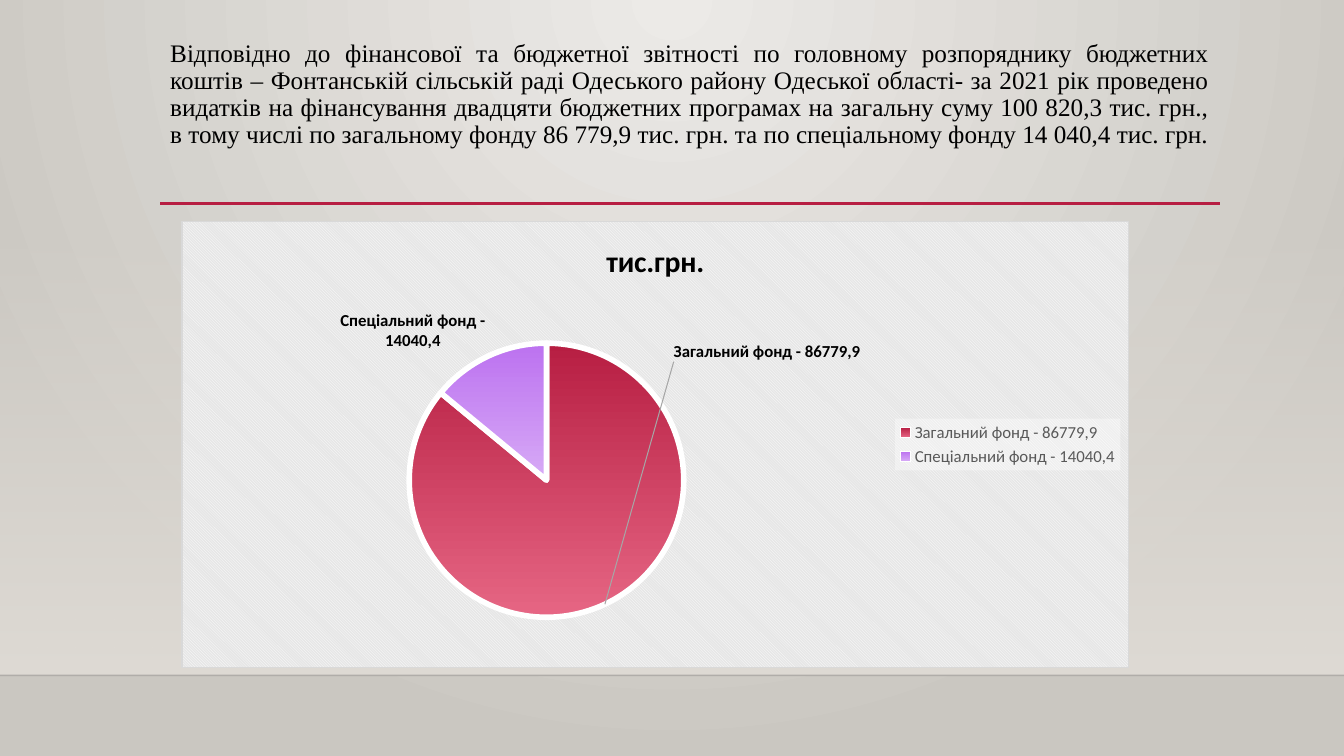
from lxml import etree
from pptx import Presentation
from pptx.chart.data import CategoryChartData
from pptx.dml.color import RGBColor
from pptx.enum.chart import XL_CHART_TYPE as ChartType, XL_LABEL_POSITION as LabelPosition
from pptx.enum.chart import XL_LEGEND_POSITION as LegendPosition
from pptx.enum.shapes import MSO_CONNECTOR as Connector, MSO_SHAPE as Shape
from pptx.enum.text import MSO_ANCHOR as Anchor, PP_ALIGN as Align
from pptx.oxml import parse_xml
from pptx.oxml.ns import nsdecls, qn
from pptx.util import Inches, Pt

# Content
HEADLINE = (
    "Відповідно до фінансової та бюджетної звітності по головному розпоряднику "
    "бюджетних коштів – Фонтанській сільській раді Одеського району Одеської "
    "області- за 2021 рік проведено видатків на фінансування двадцяти бюджетних "
    "програмах на загальну суму 100 820,3 тис. грн., в тому числі по загальному "
    "фонду 86 779,9 тис. грн. та по спеціальному фонду 14 040,4 тис. грн."
)
CHART_TITLE = "тис.грн."
FUNDS = [  # category, share, gradient from top to bottom
    ("Загальний фонд - 86779,9", 86, ("crimson", "rose")),
    ("Спеціальний фонд - 14040,4", 14, ("violet", "lilac")),
]
COLORS = {
    "black": "000000", "white": "FFFFFF", "crimson": "B71E42", "rose": "E66684",
    "violet": "BC72F0", "lilac": "D7AAF6", "light": "ECEAE7", "dark": "CAC7C1",
    "wall": "DFDBD5", "floor": "000001", "legend": "595959", "stripe": "E6E6E6",
    "border": "D9D9D9", "leader": "A6A6A6",
}
PIE_AREA = {"x": 0.24, "y": 0.27, "w": 0.29, "h": 0.62}
LABEL_SHIFT = {"x": 0.07, "y": -0.6}
WIDTH, HEIGHT, FLOOR = 13.33, 7.5, 6.7


def rgb(name):
    return RGBColor.from_string(COLORS[name])


def fill_gradient(fill, names):
    fill.gradient()
    for stop, position, name in zip(fill.gradient_stops, (0, 1), names):
        stop.position = position
        stop.color.rgb = rgb(name)


def set_alpha(color_element, percent):
    etree.SubElement(color_element, qn("a:alpha")).set("val", str(percent * 1000))


def style_font(font, size, color, bold=False, name="Calibri"):
    font.size, font.bold, font.name = Pt(size), bold, name
    font.color.rgb = rgb(color)


def add_line(left, right, top, color, width):
    line = slide.shapes.add_connector(
        Connector.STRAIGHT, Inches(left), Inches(top), Inches(right), Inches(top))
    line.line.color.rgb = rgb(color)
    line.line.width = Pt(width)
    properties = line._element.spPr
    etree.SubElement(properties, qn("a:effectLst"))
    return properties


def manual_layout(places, inner=False):
    modes = '<c:layoutTarget val="inner"/>' if inner else ""
    if inner:
        modes += '<c:xMode val="edge"/><c:yMode val="edge"/>'
    values = "".join(f'<c:{key} val="{value}"/>' for key, value in places.items())
    return parse_xml(f'<c:layout {nsdecls("c")}><c:manualLayout>{modes}{values}'
                     "</c:manualLayout></c:layout>")


presentation = Presentation()
presentation.slide_width, presentation.slide_height = Inches(WIDTH), Inches(HEIGHT)
slide = presentation.slides.add_slide(presentation.slide_layouts[6])

# Background: round glow from the top centre
background = slide.background.fill
fill_gradient(background, ("light", "dark"))
linear = next(slide._element.iter(qn("a:lin")))
linear.getparent().replace(linear, parse_xml(
    f'<a:path {nsdecls("a")} path="circle">'
    '<a:fillToRect l="43000" t="0" r="43000" b="100000"/></a:path>'))

# Wall fading in down to the floor line
wall = slide.shapes.add_shape(
    Shape.RECTANGLE, 0, Inches(2.21), Inches(WIDTH), Inches(FLOOR - 2.21))
wall.shadow.inherit = False
wall.line.fill.background()
fill_gradient(wall.fill, ("wall", "wall"))
wall.fill.gradient_angle = 270
set_alpha(next(wall._element.spPr.iter(qn("a:srgbClr"))), 0)

floor_line = add_line(0, WIDTH, FLOOR, "floor", 1)
set_alpha(next(floor_line.iter(qn("a:srgbClr"))), 20)
add_line(1.59, 12.1, 2.02, "crimson", 2.5)

# Headline; the closing break justifies its last line too
headline = slide.shapes.add_textbox(Inches(1.59), Inches(0.35), Inches(10.5), Inches(2.28))
headline.text_frame.word_wrap = True
headline.text_frame.vertical_anchor = Anchor.TOP
paragraph = headline.text_frame.paragraphs[0]
paragraph.alignment = Align.JUSTIFY
paragraph.line_spacing = 0.9
run = paragraph.add_run()
run.text = HEADLINE
style_font(run.font, 18, "black", name="Times New Roman")
paragraph.add_line_break()

# Pie chart
data = CategoryChartData()
data.categories = [fund for fund, _, _ in FUNDS]
data.add_series(CHART_TITLE, [share for _, share, _ in FUNDS])
chart = slide.shapes.add_chart(
    ChartType.PIE, Inches(1.8), Inches(2.19), Inches(9.4), Inches(4.44), data).chart
style_font(chart.font, 10, "black")
chart.has_title = True
title_run = chart.chart_title.text_frame.paragraphs[0].add_run()
title_run.text = CHART_TITLE
style_font(title_run.font, 21.3, "black", bold=True)

# Striped chart area and place of the pie
chart_element = chart._chartSpace.find(qn("c:chart"))
chart_element.addnext(parse_xml(
    f'<c:spPr {nsdecls("c", "a")}><a:pattFill prst="dkDnDiag">'
    f'<a:fgClr><a:srgbClr val="{COLORS["white"]}"/></a:fgClr>'
    f'<a:bgClr><a:srgbClr val="{COLORS["stripe"]}"/></a:bgClr></a:pattFill>'
    f'<a:ln w="9525"><a:solidFill><a:srgbClr val="{COLORS["border"]}"/>'
    "</a:solidFill></a:ln></c:spPr>"))
plot_area = chart_element.find(qn("c:plotArea"))
for layout in plot_area.findall(qn("c:layout")):
    plot_area.remove(layout)
plot_area.insert(0, manual_layout(PIE_AREA, inner=True))

# Slices
plot = chart.plots[0]
plot.vary_by_categories = True
series = plot.series[0]
for index, (_, _, gradient) in enumerate(FUNDS):
    slice_format = series.points[index].format
    fill_gradient(slice_format.fill, gradient)
    slice_format.fill.gradient_angle = 270
    slice_format.line.color.rgb = rgb("white")
    slice_format.line.width = Pt(4)

# Category labels, the first one moved up with a leader line
labels = series.data_labels
labels.show_category_name, labels.show_value = True, False
labels.position = LabelPosition.BEST_FIT
style_font(labels.font, 12, "black", bold=True)
moved = series.points[0].data_label
style_font(moved.font, 12, "black", bold=True)
moved.position = LabelPosition.BEST_FIT
labels_element = labels._element
label_element = labels_element.find(qn("c:dLbl"))
label_element.find(qn("c:idx")).addnext(manual_layout(LABEL_SHIFT))
label_element.find(qn("c:showVal")).set("val", "0")
label_element.find(qn("c:showCatName")).set("val", "1")
for leader in labels_element.findall(qn("c:showLeaderLines")):
    labels_element.remove(leader)
etree.SubElement(labels_element, qn("c:showLeaderLines")).set("val", "1")
labels_element.append(parse_xml(
    f'<c:leaderLines {nsdecls("c", "a")}><c:spPr><a:ln w="9525"><a:solidFill>'
    f'<a:srgbClr val="{COLORS["leader"]}"/></a:solidFill></a:ln></c:spPr></c:leaderLines>'))

# Legend on a pale panel
chart.has_legend = True
legend = chart.legend
legend.position = LegendPosition.RIGHT
legend.include_in_layout = False
style_font(legend.font, 12, "legend")
legend._element.find(qn("c:overlay")).addnext(parse_xml(
    f'<c:spPr {nsdecls("c", "a")}><a:solidFill><a:srgbClr val="{COLORS["white"]}">'
    '<a:alpha val="39000"/></a:srgbClr></a:solidFill></c:spPr>'))

presentation.save("out.pptx")
